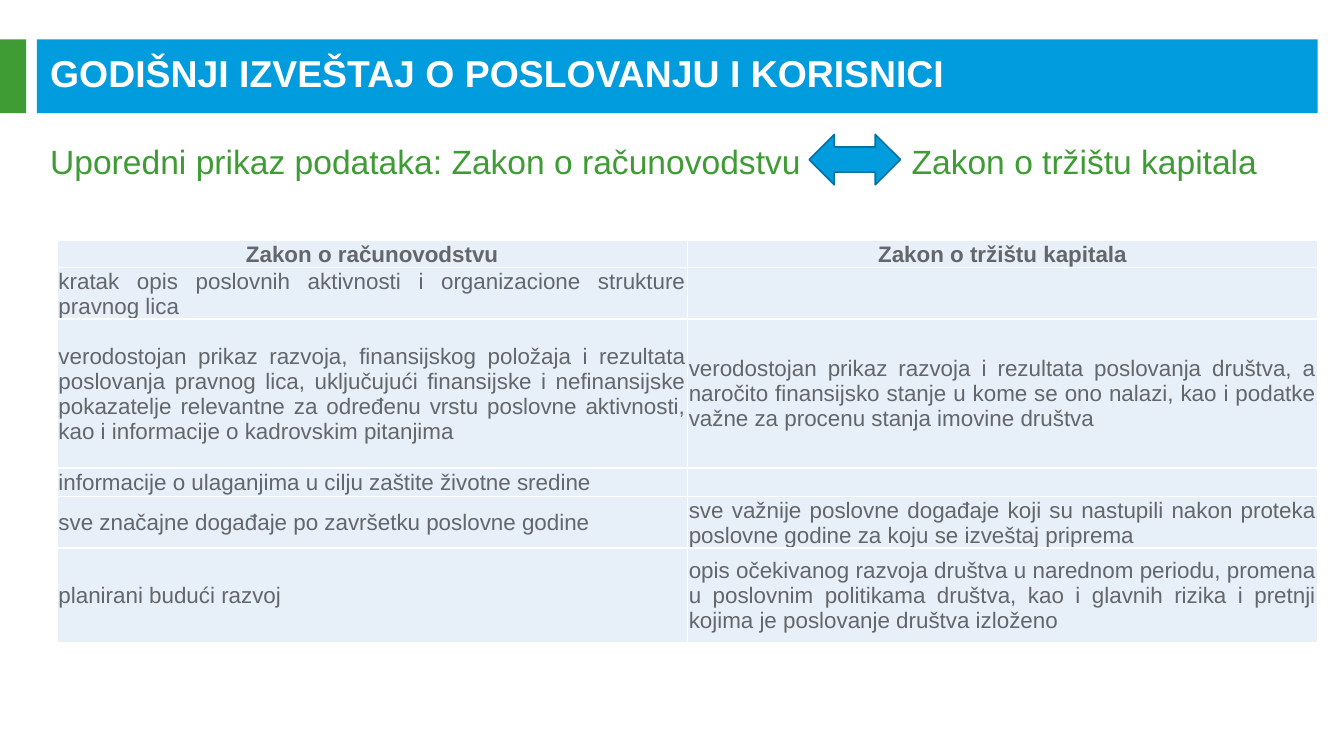
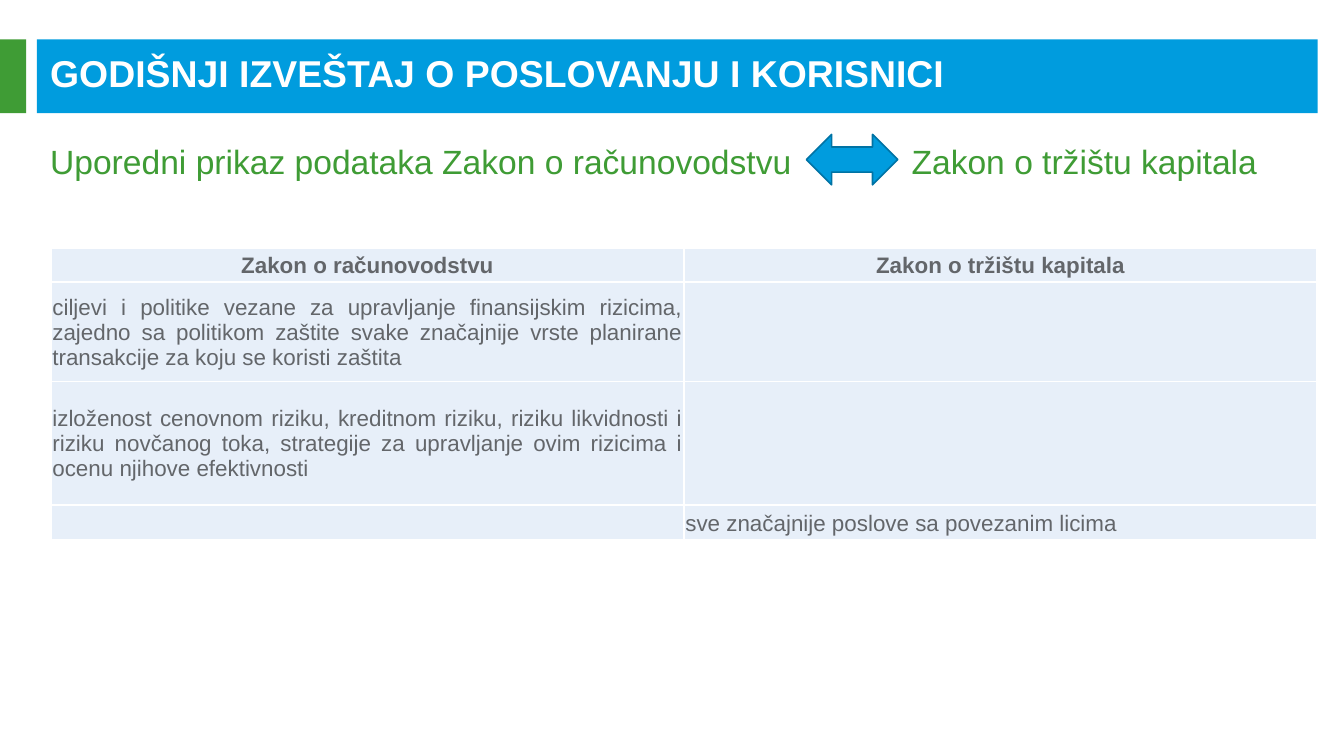
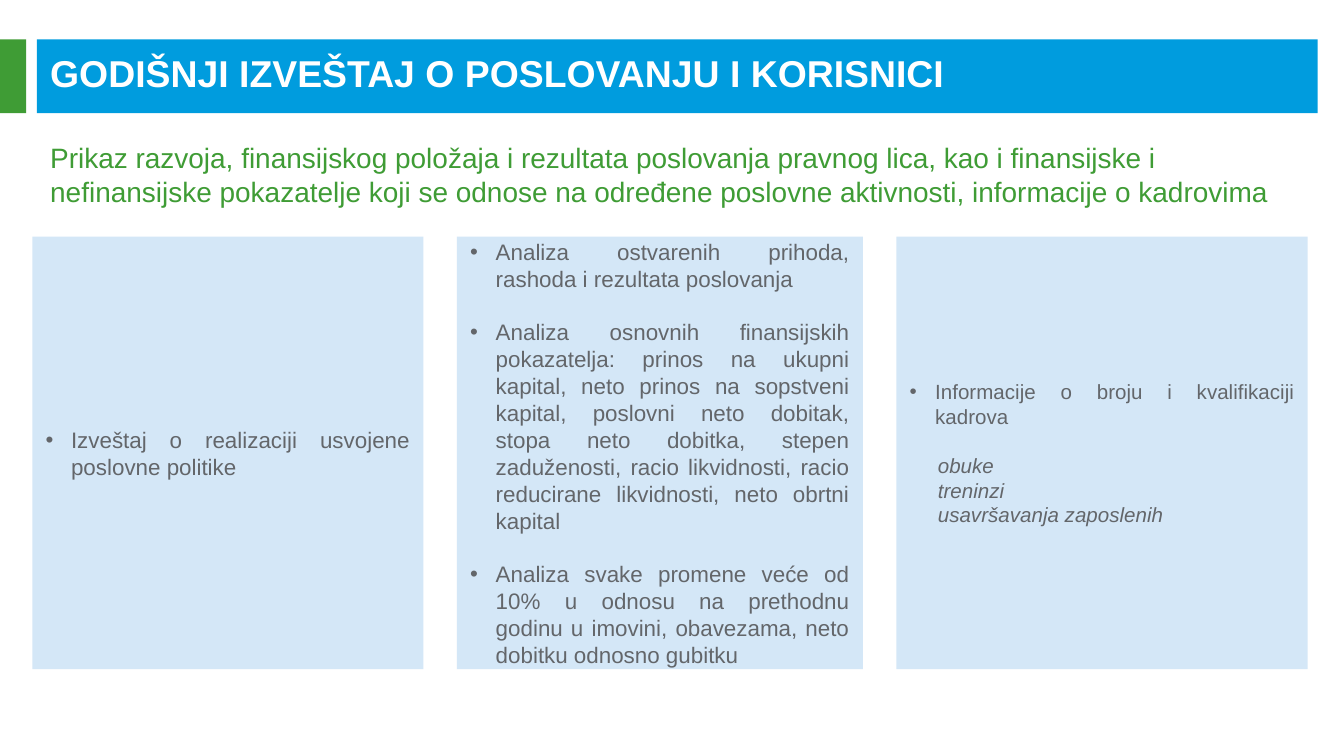
from dataclasses import dataclass
from itertools import product

from lxml import etree
from pptx import Presentation
from pptx import util as u
from pptx.dml.color import RGBColor
from pptx.enum import shapes, text
from pptx.oxml.ns import qn

CELL = u.Inches(0.1)  # side of one grid cell
COLS, ROWS = 100, 56.25
FONT = "Arial"
COLORS = {
    "blue": "009CDE",
    "dark_blue": "0073A4",
    "green": "3F9C35",
    "grey": "63666A",
    "white": "FFFFFF",
    "table": "E7EFF9",
    "panel": "D4E7F7",
}
TITLE = "GODIŠNJI IZVEŠTAJ O POSLOVANJU I KORISNICI"
LAWS = ("Zakon o računovodstvu", "Zakon o tržištu kapitala")
HANG = 1.9
PANEL_GAP = 2.5
TABLE_LINE = u.Pt(13.4)
ALIGN = text.PP_ALIGN
RECT = shapes.MSO_SHAPE.RECTANGLE


@dataclass(frozen=True)
class Area:
    """Position and size in grid columns and rows."""
    col: float
    row: float
    cols: float
    rows: float

    def emu(self) -> list[int]:
        return [grid(n) for n in (self.col, self.row, self.cols, self.rows)]


@dataclass(frozen=True)
class Comparison:
    lead: str
    arrow_col: float
    left: float
    top: float
    col_width: float
    heights: tuple[float, ...]
    body: tuple[tuple[str, str], ...]


@dataclass(frozen=True)
class Panel:
    cols: float
    size: float
    gap: float
    bullets: tuple[str, ...]
    details: tuple[str, ...] = ()


BAND = Area(2.75, 2.93, 95.3, 5.5)
TAB = Area(0, 2.93, 1.96, 5.5)
HEADING = Area(2.75, 3.9, 94.5, 3)
SUBTITLE = Area(2.75, 10, 95.3, 5.3)

COMPARISONS = (
    Comparison(
        "Uporedni prikaz podataka: Zakon o računovodstvu", 60.2, 4.25, 17.9, 46.9,
        (2, 3.8, 11.1, 2.1, 3.8, 7.1),
        (
            ("kratak opis poslovnih aktivnosti i organizacione strukture pravnog lica", ""),
            ("verodostojan prikaz razvoja, finansijskog položaja i rezultata poslovanja "
             "pravnog lica, uključujući finansijske i nefinansijske pokazatelje relevantne "
             "za određenu vrstu poslovne aktivnosti, kao i informacije o kadrovskim pitanjima",
             "verodostojan prikaz razvoja i rezultata poslovanja društva, a naročito "
             "finansijsko stanje u kome se ono nalazi, kao i podatke važne za procenu "
             "stanja imovine društva"),
            ("informacije o ulaganjima u cilju zaštite životne sredine", ""),
            ("sve značajne događaje po završetku poslovne godine",
             "sve važnije poslovne događaje koji su nastupili nakon proteka poslovne "
             "godine za koju se izveštaj priprema"),
            ("planirani budući razvoj",
             "opis očekivanog razvoja društva u narednom periodu, promena u poslovnim "
             "politikama društva, kao i glavnih rizika i pretnji kojima je poslovanje "
             "društva izloženo"),
        ),
    ),
    Comparison(
        "Uporedni prikaz podataka Zakon o računovodstvu", 60, 3.8, 18.5, 47.1,
        (2.5, 7.4, 9.2, 2.6),
        (
            ("ciljevi i politike vezane za upravljanje finansijskim rizicima, zajedno sa "
             "politikom zaštite svake značajnije vrste planirane transakcije za koju se "
             "koristi zaštita", ""),
            ("izloženost cenovnom riziku, kreditnom riziku, riziku likvidnosti i riziku "
             "novčanog toka, strategije za upravljanje ovim rizicima i ocenu njihove "
             "efektivnosti", ""),
            ("", "sve značajnije poslove sa povezanim licima"),
        ),
    ),
)

ANALYSIS = (
    "Prikaz razvoja, finansijskog položaja i rezultata poslovanja pravnog lica, kao i "
    "finansijske i nefinansijske pokazatelje koji se odnose na određene poslovne "
    "aktivnosti, informacije o kadrovima"
)
PANELS = (
    Panel(29.1, 12, 0, ("Izveštaj o realizaciji usvojene poslovne politike",)),
    Panel(30.2, 12, 14.4, (
        "Analiza ostvarenih prihoda, rashoda i rezultata poslovanja",
        "Analiza osnovnih finansijskih pokazatelja: prinos na ukupni kapital, neto prinos "
        "na sopstveni kapital, poslovni neto dobitak, stopa neto dobitka, stepen "
        "zaduženosti, racio likvidnosti, racio reducirane likvidnosti, neto obrtni kapital",
        "Analiza svake promene veće od 10% u odnosu na prethodnu godinu u imovini, "
        "obavezama, neto dobitku odnosno gubitku",
    )),
    Panel(30.6, 11, 13.2, ("Informacije o broju i kvalifikaciji kadrova",),
          ("obuke", "treninzi", "usavršavanja zaposlenih")),
)


def grid(n: float) -> int:
    return round(n * CELL)


def rgb(name: str) -> RGBColor:
    return RGBColor.from_string(COLORS[name])


def write(p, content: str, *, size: float = 12, color: str = "grey", bold: bool = False,
          italic: bool = False, align=ALIGN.LEFT, before: float = 0,
          spacing: float | u.Length = 1.0, indent: float = 0, bullet: bool = False,
          stop: float = 0) -> None:
    """Fill a paragraph; indent and tab stop are in grid columns."""
    p.alignment = align
    p.line_spacing = spacing
    p.space_before = u.Pt(before)
    pPr = p._p.get_or_add_pPr()
    if indent:
        pPr.set("marL", str(grid(indent)))
    if bullet:
        pPr.set("indent", str(-grid(indent)))
        etree.SubElement(pPr, qn("a:buFont"), typeface=FONT)
        etree.SubElement(pPr, qn("a:buChar"), char="•")
    if stop:
        tabs = etree.SubElement(pPr, qn("a:tabLst"))
        etree.SubElement(tabs, qn("a:tab"), pos=str(grid(stop)), algn="l")
    if not content:
        etree.SubElement(p._p, qn("a:endParaRPr"), sz=str(round(size * 100)))
        return
    r = p.add_run()
    r.text = content
    font = r.font
    font.name, font.size, font.bold, font.italic = FONT, u.Pt(size), bold, italic
    font.color.rgb = rgb(color)


def add_box(slide, area: Area, fill: str, kind=RECT, line: str = ""):
    sp = slide.shapes.add_shape(kind, *area.emu())
    sp.shadow.inherit = False
    sp.fill.solid()
    sp.fill.fore_color.rgb = rgb(fill)
    if line:
        sp.line.color.rgb = rgb(line)
        sp.line.width = u.Pt(0.85)
    else:
        sp.line.fill.background()
    return sp


def add_label(slide, area: Area, content: str, anchor=text.MSO_ANCHOR.TOP, **style) -> None:
    tf = slide.shapes.add_textbox(*area.emu()).text_frame
    tf.word_wrap = True
    tf.vertical_anchor = anchor
    write(tf.paragraphs[0], content, **style)


def add_slide(prs, subtitle: str, **style):
    """Add a blank slide with the title band and a green subtitle."""
    slide = prs.slides.add_slide(prs.slide_layouts[6])
    add_box(slide, BAND, "blue")
    add_box(slide, TAB, "green")
    add_label(slide, HEADING, TITLE, text.MSO_ANCHOR.MIDDLE,
              size=20, color="white", bold=True)
    add_label(slide, SUBTITLE, subtitle, color="green", **style)
    return slide


def set_borders(cell) -> None:
    tcPr = cell._tc.get_or_add_tcPr()
    for i, side in enumerate(("lnL", "lnR", "lnT", "lnB")):
        ln = etree.Element(qn(f"a:{side}"), w=str(u.Pt(1)))
        fill = etree.SubElement(ln, qn("a:solidFill"))
        etree.SubElement(fill, qn("a:srgbClr"), val=COLORS["white"])
        tcPr.insert(i, ln)


def add_comparison(prs, item: Comparison) -> None:
    slide = add_slide(prs, f"{item.lead}\t{LAWS[1]}", size=18, stop=64.1)
    rows = (LAWS, *item.body)
    area = Area(item.left, item.top, 2 * item.col_width, sum(item.heights))
    table = slide.shapes.add_table(len(rows), 2, *area.emu()).table
    for col in table.columns:
        col.width = grid(item.col_width)
    for row, height in zip(table.rows, item.heights):
        row.height = grid(height)
    for i, j in product(range(len(rows)), range(2)):
        cell = table.cell(i, j)
        cell.margin_left = cell.margin_right = cell.margin_top = grid(0.1)
        cell.margin_bottom = 0
        cell.vertical_anchor = text.MSO_ANCHOR.MIDDLE
        cell.fill.solid()
        cell.fill.fore_color.rgb = rgb("table")
        set_borders(cell)
        write(cell.text_frame.paragraphs[0], rows[i][j], bold=i == 0, spacing=TABLE_LINE,
              align=ALIGN.JUSTIFY if i else ALIGN.CENTER)
    add_box(slide, Area(item.arrow_col, 10, 6.8, 3.75), "blue",
            shapes.MSO_SHAPE.LEFT_RIGHT_ARROW, "dark_blue")


def add_panel(slide, col: float, panel: Panel) -> None:
    tf = add_box(slide, Area(col, 17.6, panel.cols, 32.2), "panel").text_frame
    tf.word_wrap = True
    tf.vertical_anchor = text.MSO_ANCHOR.MIDDLE
    for i, content in enumerate(panel.bullets + panel.details):
        detail = i - len(panel.bullets)
        p = tf.add_paragraph() if i else tf.paragraphs[0]
        write(p, content, size=panel.size, align=ALIGN.JUSTIFY,
              before=panel.gap if i and detail <= 0 else 0,
              indent=HANG if detail < 0 else 2.1,
              bullet=detail < 0, italic=detail >= 0)


def main() -> None:
    prs = Presentation()
    prs.slide_width, prs.slide_height = grid(COLS), grid(ROWS)
    for item in COMPARISONS:
        add_comparison(prs, item)
    slide = add_slide(prs, ANALYSIS, size=15)
    col = 2.4
    for panel in PANELS:
        add_panel(slide, col, panel)
        col += panel.cols + PANEL_GAP
    prs.save("out.pptx")


if __name__ == "__main__":
    main()
